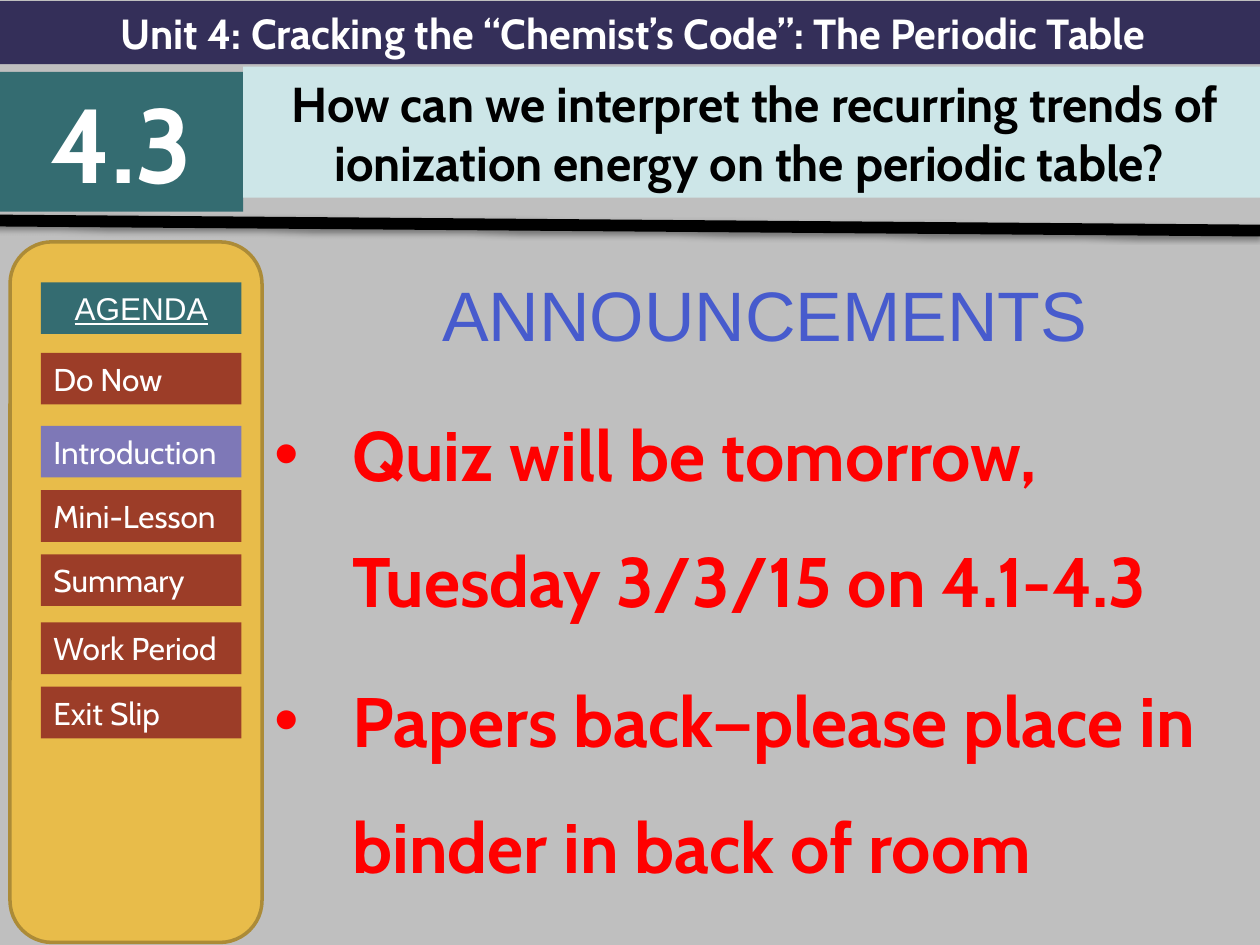
from dataclasses import dataclass

from lxml import etree
from pptx import Presentation
from pptx import util as u
from pptx.dml.color import RGBColor
from pptx.enum import shapes, text
from pptx.oxml import ns


@dataclass(frozen=True)
class Theme:
    back: str = "BFBFBF"
    navy: str = "342F59"
    teal: str = "346C71"
    pale: str = "CDE6E8"
    gold: str = "E8BC4A"
    edge: str = "AC8B37"
    rust: str = "9C3D28"
    lilac: str = "7E78B7"
    blue: str = "475BCD"
    red: str = "FF0000"
    white: str = "FFFFFF"
    black: str = "000000"
    head: str = "Cabin"
    plain: str = "Arial"
    small: int = 18
    unit: int = 24
    ask: int = 28
    main: int = 40
    huge: int = 60


T = Theme()
MID = text.PP_ALIGN.CENTER
LEFT = text.PP_ALIGN.LEFT


def rgb(code):
    return RGBColor.from_string(code)


def place(box):
    return [u.Inches(n) for n in box]


def style(para, size, color, face=T.head, bold=False, align=MID):
    para.alignment = align
    font = para.font
    font.size, font.name, font.bold = u.Pt(size), face, bold
    font.color.rgb = rgb(color)


def block(parent, box, fill, kind=shapes.MSO_SHAPE.RECTANGLE):
    shape = parent.add_shape(kind, *place(box))
    shape.shadow.inherit = False
    shape.fill.solid()
    shape.fill.fore_color.rgb = rgb(fill)
    shape.line.fill.background()
    return shape


def label(parent, box, fill, words, size, color=T.white, **look):
    frame = block(parent, box, fill).text_frame
    frame.word_wrap = True
    frame.auto_size = text.MSO_AUTO_SIZE.SHAPE_TO_FIT_TEXT
    para = frame.paragraphs[0]
    para.text = words
    style(para, size, color, **look)
    return para


def header(parent, box):
    x, y, wide, high = box
    side = 1.93
    label(parent, (x, y, wide, 0.5), T.navy,
          "Unit 4: Cracking the “Chemist’s Code”: The Periodic Table",
          T.unit, bold=True)
    label(parent, (x, y + 0.56, side, high - 0.56), T.teal, "4.3",
          T.huge, bold=True)
    label(parent, (x + side, y + 0.52, wide - side, 1.04), T.pale,
          "How can we interpret the recurring trends of "
          "ionization energy on the periodic table? ",
          T.ask, T.black, bold=True)


def rule(parent, box):
    x, y, wide, high = box
    line = parent.add_connector(shapes.MSO_CONNECTOR.STRAIGHT,
                                *place((x, y, x + wide, y + high)))
    line.line.color.rgb = rgb(T.black)
    line.line.width = u.Pt(6.75)
    props = line._element.spPr
    effects = etree.SubElement(props, ns.qn("a:effectLst"))
    shadow = etree.SubElement(effects, ns.qn("a:outerShdw"),
                              blurRad=str(u.Pt(3.1)), dist=str(u.Pt(1.6)),
                              dir="5400000", rotWithShape="0")
    color = etree.SubElement(shadow, ns.qn("a:srgbClr"), val=T.black)
    etree.SubElement(color, ns.qn("a:alpha"), val="38000")


def agenda(parent, box):
    x, y, wide, high = box
    group = parent.add_group_shape().shapes
    panel = block(group, box, T.gold, shapes.MSO_SHAPE.ROUNDED_RECTANGLE)
    panel.line.color.rgb = rgb(T.edge)
    panel.line.width = u.Pt(2)
    left, span, tall = x + 0.245, 1.59, 0.41
    title = label(group, (left, y + 0.32, span, tall), T.teal, "AGENDA",
                  T.small, face=T.plain)
    title.font.underline = True
    steps = (("Do Now", 0.88), ("Introduction", 1.46), ("Mini-Lesson", 1.97),
             ("Summary", 2.48), ("Work Period", 3.02), ("Exit Slip", 3.53))
    for words, drop in steps:
        fill = T.lilac if words == "Introduction" else T.rust
        label(group, (left, y + drop, span, tall), fill, words, T.small,
              align=LEFT)


def bullet(para):
    props = para._p.get_or_add_pPr()
    props.set("marL", str(u.Inches(0.62)))
    props.set("indent", str(u.Inches(-0.62)))
    etree.SubElement(props, ns.qn("a:buFont"), typeface=T.plain)
    etree.SubElement(props, ns.qn("a:buChar"), char="•")
    props.append(props.find(ns.qn("a:defRPr")))


def news(parent, box):
    frame = parent.add_textbox(*place(box)).text_frame
    frame.word_wrap = True
    title = frame.paragraphs[0]
    title.text = "ANNOUNCEMENTS"
    style(title, T.main, T.blue, T.plain)
    title.line_spacing = 1.1
    title.space_before = u.Pt(8)
    for words in ("Quiz will be tomorrow, Tuesday 3/3/15 on 4.1-4.3",
                  "Papers back—please place in binder in back of room"):
        para = frame.add_paragraph()
        para.text = words
        style(para, T.main, T.red, bold=True, align=LEFT)
        para.line_spacing = 1.5
        para.space_before = u.Pt(8)
        bullet(para)


def main():
    deck = Presentation()
    deck.slide_width, deck.slide_height = u.Inches(10), u.Inches(7.5)
    slide = deck.slides.add_slide(deck.slide_layouts[6])
    slide.background.fill.solid()
    slide.background.fill.fore_color.rgb = rgb(T.back)
    parts = slide.shapes
    news(parts, (2.08, 2.04, 7.98, 5.46))
    header(parts, (0, 0.01, 10.05, 1.67))
    rule(parts, (-0.05, 1.75, 10.05, 0.08))
    agenda(parts, (0.08, 1.92, 2, 5.56))
    deck.save("out.pptx")


if __name__ == "__main__":
    main()
